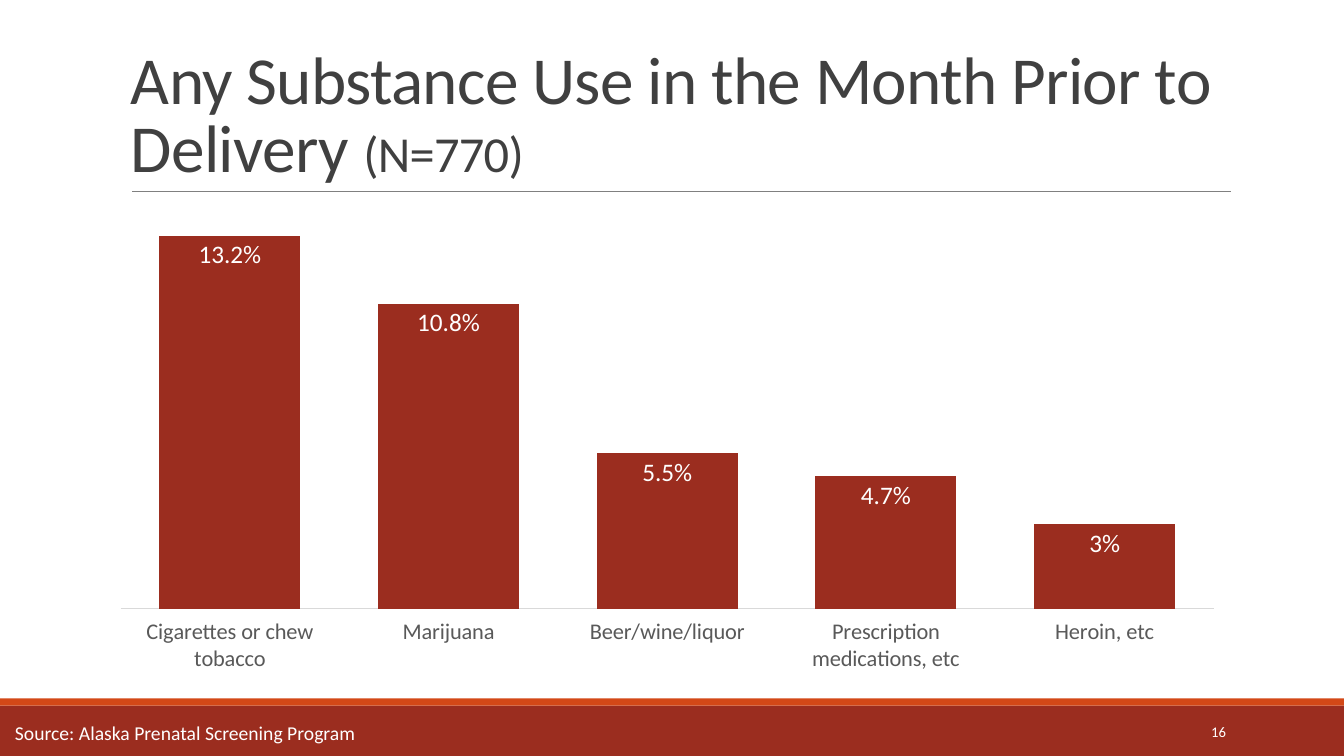
from lxml.etree import SubElement
from pptx import Presentation
from pptx.chart.data import CategoryChartData
from pptx.dml.color import RGBColor
from pptx.enum.chart import XL_CHART_TYPE, XL_LABEL_POSITION, XL_TICK_LABEL_POSITION, XL_TICK_MARK
from pptx.enum.shapes import MSO_CONNECTOR, MSO_SHAPE
from pptx.enum.text import MSO_ANCHOR, PP_ALIGN
from pptx.oxml import parse_xml
from pptx.oxml.ns import nsdecls, qn
from pptx.util import Inches, Pt

COLUMNS, ROWS = 133.33, 75


def colour(value):
    return RGBColor.from_string(value)


class SlideBuilder:
    """Draws styled elements on one slide, placed by columns and rows."""

    font_name = "Calibri"
    brick, orange, white = "9B2D1F", "D34817", "FFFFFF"
    title_grey, label_grey, rule_grey, axis_grey = "404040", "595959", "808080", "D9D9D9"

    def __init__(self, deck):
        self.page = deck.slides.add_slide(deck.slide_layouts[6])
        self.column = deck.slide_width / COLUMNS
        self.row = deck.slide_height / ROWS

    def place(self, left, top, width, height):
        return (round(left * self.column), round(top * self.row),
                round(width * self.column), round(height * self.row))

    def style(self, font, size, tone):
        font.name, font.size = self.font_name, Pt(size)
        font.color.rgb = colour(tone)

    def band(self, area, tone):
        band = self.page.shapes.add_shape(MSO_SHAPE.RECTANGLE, *self.place(*area))
        band.shadow.inherit = False
        band.fill.solid()
        band.fill.fore_color.rgb = colour(tone)
        band.line.fill.background()

    def rule(self, left, right, row):
        start_x, y, width, _ = self.place(left, row, right - left, 0)
        rule = self.page.shapes.add_connector(
            MSO_CONNECTOR.STRAIGHT, start_x, y, start_x + width, y)
        rule.line.color.rgb = colour(self.rule_grey)
        rule.line.width = Pt(0.5)
        SubElement(rule._element.spPr, qn("a:effectLst"))

    def text(self, area, spans, tone, anchor=MSO_ANCHOR.TOP, align=PP_ALIGN.LEFT,
             wrap=True, line_spacing=1.0, tracking=0):
        box = self.page.shapes.add_textbox(*self.place(*area))
        frame = box.text_frame
        frame.word_wrap, frame.vertical_anchor = wrap, anchor
        para = frame.paragraphs[0]
        para.alignment, para.line_spacing = align, line_spacing
        for words, size in spans:
            span = para.add_run()
            span.text = words
            self.style(span.font, size, tone)
            if tracking:
                span._r.get_or_add_rPr().set("spc", str(round(tracking * 100)))

    def column_chart(self, area, series_name, shares, plot_area):
        data = CategoryChartData(number_format='General"%"')
        data.categories = list(shares)
        data.add_series(series_name, list(shares.values()))
        chart = self.page.shapes.add_chart(
            XL_CHART_TYPE.COLUMN_CLUSTERED, *self.place(*area), data).chart
        chart.has_legend = chart.has_title = False
        self.style(chart.font, 16, self.label_grey)
        self.axes(chart)
        self.columns(chart.plots[0])
        self.plot_layout(chart, plot_area)

    def axes(self, chart):
        names, values = chart.category_axis, chart.value_axis
        names.major_tick_mark = names.minor_tick_mark = XL_TICK_MARK.NONE
        names.tick_label_position = XL_TICK_LABEL_POSITION.LOW
        self.style(names.tick_labels.font, 16, self.label_grey)
        names.format.line.color.rgb = colour(self.axis_grey)
        names.format.line.width = Pt(0.75)
        values.visible = values.has_major_gridlines = False
        values.minimum_scale, values.maximum_scale = 0, 14

    def columns(self, plot):
        plot.gap_width, plot.overlap, plot.vary_by_categories = 55, -27, False
        series = plot.series[0]
        series.format.fill.solid()
        series.format.fill.fore_color.rgb = colour(self.brick)
        labels = series.data_labels
        labels.show_value, labels.position = True, XL_LABEL_POSITION.INSIDE_END
        labels.number_format, labels.number_format_is_linked = 'General"%"', False
        self.style(labels.font, 18, self.white)

    def plot_layout(self, chart, plot_area):
        plot = chart._chartSpace.chart.plotArea
        for layout in plot.findall(qn("c:layout")):
            plot.remove(layout)
        sides = "".join(f'<c:{side} val="{share}"/>' for side, share in zip("xywh", plot_area))
        plot.insert(0, parse_xml(
            f'<c:layout {nsdecls("c")}><c:manualLayout><c:layoutTarget val="inner"/>'
            f'<c:xMode val="edge"/><c:yMode val="edge"/>{sides}</c:manualLayout></c:layout>'))


def main():
    deck = Presentation()
    deck.slide_width, deck.slide_height = Inches(13.33), Inches(7.5)
    builder = SlideBuilder(deck)
    builder.band((0, 70, COLUMNS, 5), builder.brick)
    builder.band((0, 69.3, COLUMNS, 0.7), builder.orange)
    builder.rule(13.1, 122.1, 19)
    builder.text((12, 3.1, 110, 15.9),
                 [("Any Substance Use in the Month Prior to Delivery ", 48), ("(N=770)", 36)],
                 builder.title_grey, anchor=MSO_ANCHOR.BOTTOM, line_spacing=0.85, tracking=-0.5)
    builder.text((108.3, 70.6, 14.3, 4), [("16", 10.5)], builder.white,
                 anchor=MSO_ANCHOR.MIDDLE, align=PP_ALIGN.RIGHT)
    shares = {
        "Cigarettes or chew tobacco": 13.2,
        "Marijuana": 10.8,
        "Beer/wine/liquor": 5.5,
        "Prescription medications, etc": 4.7,
        "Heroin, etc": 3,
    }
    builder.column_chart((9.7, 20.2, 113, 47.3), "Series 1", shares, (0.02, 0.02, 0.96, 0.83))
    builder.text((0.5, 71, 36.1, 3.4), [("Source: Alaska Prenatal Screening Program", 14)],
                 builder.white, wrap=False)
    deck.save("out.pptx")


if __name__ == "__main__":
    main()
